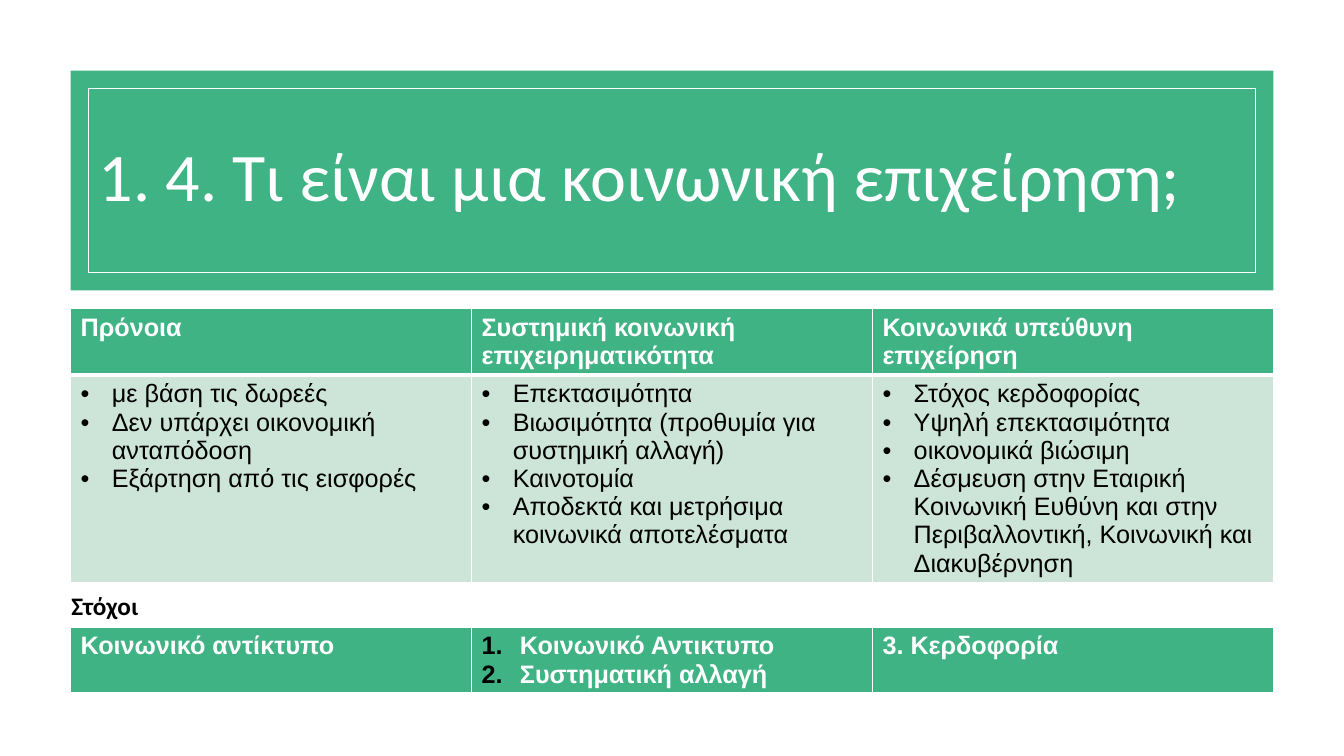
import pptx
import pptx.util
import pptx.dml.color
import pptx.enum.shapes
import pptx.enum.text
import pptx.oxml
import pptx.oxml.ns
import lxml.etree

Inches, Pt = pptx.util.Inches, pptx.util.Pt
RGBColor = pptx.dml.color.RGBColor
GREEN = RGBColor(0x40, 0xB3, 0x85)
PALE = RGBColor(0xCD, 0xE4, 0xD8)
WHITE = RGBColor(0xFF, 0xFF, 0xFF)
BLACK = RGBColor(0, 0, 0)

LEFT, WIDTH = 0.7, 11.93
BULLET = '<a:buFont xmlns:a="{}" typeface="Arial"/>', '<a:buChar xmlns:a="{}" char="•"/>'
NUMBER = '<a:buFont xmlns:a="{}" typeface="+mj-lt"/>', '<a:buAutoNum xmlns:a="{}" type="arabicPeriod"/>'
SPACE = pptx.oxml.ns.nsdecls("a").split('"')[1]


def add_xml(parent, text):
    parent.append(pptx.oxml.parse_xml(text.replace("{}", SPACE)))


class Deck:
    def __init__(self):
        self.file = pptx.Presentation()
        self.file.slide_width = Inches(13.33)
        self.file.slide_height = Inches(7.5)
        self.slide = self.file.slides.add_slide(self.file.slide_layouts[5])

    def run(self, para, text, size, font, color, bold=False):
        run = para.add_run()
        run.text = text
        run.font.size = Pt(size)
        run.font.name = font
        run.font.bold = bold
        run.font.color.rgb = color

    def box(self, left, top, width, height, fill=None, line=None):
        shape = self.slide.shapes.add_shape(
            pptx.enum.shapes.MSO_SHAPE.RECTANGLE,
            Inches(left), Inches(top), Inches(width), Inches(height))
        shape.shadow.inherit = False
        if fill is None:
            shape.fill.background()
        else:
            shape.fill.solid()
            shape.fill.fore_color.rgb = fill
        if line is None:
            shape.line.fill.background()
        else:
            shape.line.color.rgb = line
            shape.line.width = Pt(0.75)

    def title(self, text, left, top, width, height):
        title = self.slide.shapes.title
        title.left, title.top = Inches(left), Inches(top)
        title.width, title.height = Inches(width), Inches(height)
        title.element.getparent().append(title.element)  # bring to front
        frame = title.text_frame
        frame.word_wrap = True
        frame.auto_size = pptx.enum.text.MSO_AUTO_SIZE.NONE
        frame.vertical_anchor = pptx.enum.text.MSO_ANCHOR.MIDDLE
        para = frame.paragraphs[0]
        para.alignment = pptx.enum.text.PP_ALIGN.LEFT
        para.line_spacing = 0.85
        self.run(para, text, 48.6, "Calibri", WHITE)

    def label(self, text, left, top, width, height):
        box = self.slide.shapes.add_textbox(
            Inches(left), Inches(top), Inches(width), Inches(height))
        frame = box.text_frame
        frame.word_wrap = True
        frame.auto_size = pptx.enum.text.MSO_AUTO_SIZE.SHAPE_TO_FIT_TEXT
        self.run(frame.paragraphs[0], text, 18, "Calibri", BLACK, True)

    def mark(self, para, marks, indent):
        """Give the paragraph a hanging black bullet or number."""
        props = para._p.get_or_add_pPr()
        props.set("marL", str(Inches(indent)))
        props.set("indent", str(-Inches(indent)))
        add_xml(props, f'<a:buClr xmlns:a="{{}}"><a:srgbClr val="{BLACK}"/></a:buClr>')
        for text in marks:
            add_xml(props, text)

    def edge(self, cell, head):
        """Draw white borders, thick between the header and what follows."""
        props = cell._tc.get_or_add_tcPr()
        for side, size in (("L", 1), ("R", 1), ("T", 1 if head else 3), ("B", 3 if head else 1)):
            add_xml(props, f'<a:ln{side} xmlns:a="{{}}" w="{Pt(size)}"><a:solidFill>'
                           f'<a:srgbClr val="{WHITE}"/></a:solidFill></a:ln{side}>')

    def cell(self, cell, lines, head):
        self.edge(cell, head)
        cell.fill.solid()
        cell.fill.fore_color.rgb = GREEN if head else PALE
        frame = cell.text_frame
        for i, text in enumerate(lines):
            para = frame.add_paragraph() if i else frame.paragraphs[0]
            if not head:
                self.mark(para, BULLET, 0.31)
            elif len(lines) > 1:
                self.mark(para, NUMBER, 0.38)
            self.run(para, text, 18, "Arial", WHITE if head else BLACK, head)

    def table(self, top, rows, sizes):
        table = self.slide.shapes.add_table(
            len(rows), len(rows[0]), Inches(LEFT), Inches(top),
            Inches(WIDTH), Inches(sum(sizes))).table
        table.horz_banding = False
        for r, row in enumerate(rows):
            table.rows[r].height = Inches(sizes[r])
            for c, lines in enumerate(row):
                self.cell(table.cell(r, c), lines, r == 0)


KINDS = [
    [["Πρόνοια"],
     ["Συστημική κοινωνική επιχειρηματικότητα"],
     ["Κοινωνικά υπεύθυνη επιχείρηση"]],
    [["με βάση τις δωρεές",
      "Δεν υπάρχει οικονομική ανταπόδοση",
      "Εξάρτηση από τις εισφορές"],
     ["Επεκτασιμότητα",
      "Βιωσιμότητα (προθυμία για συστημική αλλαγή)",
      "Καινοτομία",
      "Αποδεκτά και μετρήσιμα κοινωνικά αποτελέσματα"],
     ["Στόχος κερδοφορίας",
      "Υψηλή επεκτασιμότητα",
      "οικονομικά βιώσιμη",
      "Δέσμευση στην Εταιρική Κοινωνική Ευθύνη και στην "
      "Περιβαλλοντική, Κοινωνική και Διακυβέρνηση"]],
]
GOALS = [
    [["Κοινωνικό αντίκτυπο"],
     ["Κοινωνικό Αντικτυπο", "Συστηματική αλλαγή"],
     ["3. Κερδοφορία"]],
]


def main():
    deck = Deck()
    deck.box(LEFT, 0.7, WIDTH, 2.18, fill=GREEN)
    deck.box(0.88, 0.88, 11.57, 1.82, line=WHITE)
    deck.title("1. 4. Τι είναι μια κοινωνική επιχείρηση;", 0.88, 1.12, 11.57, 1.34)
    deck.table(3.06, KINDS, [0.65, 2.06])
    deck.table(6.22, GOALS, [0.65])
    deck.label("Στόχοι", 0.61, 5.81, 1.53, 0.4)
    deck.file.save("out.pptx")


if __name__ == "__main__":
    main()
